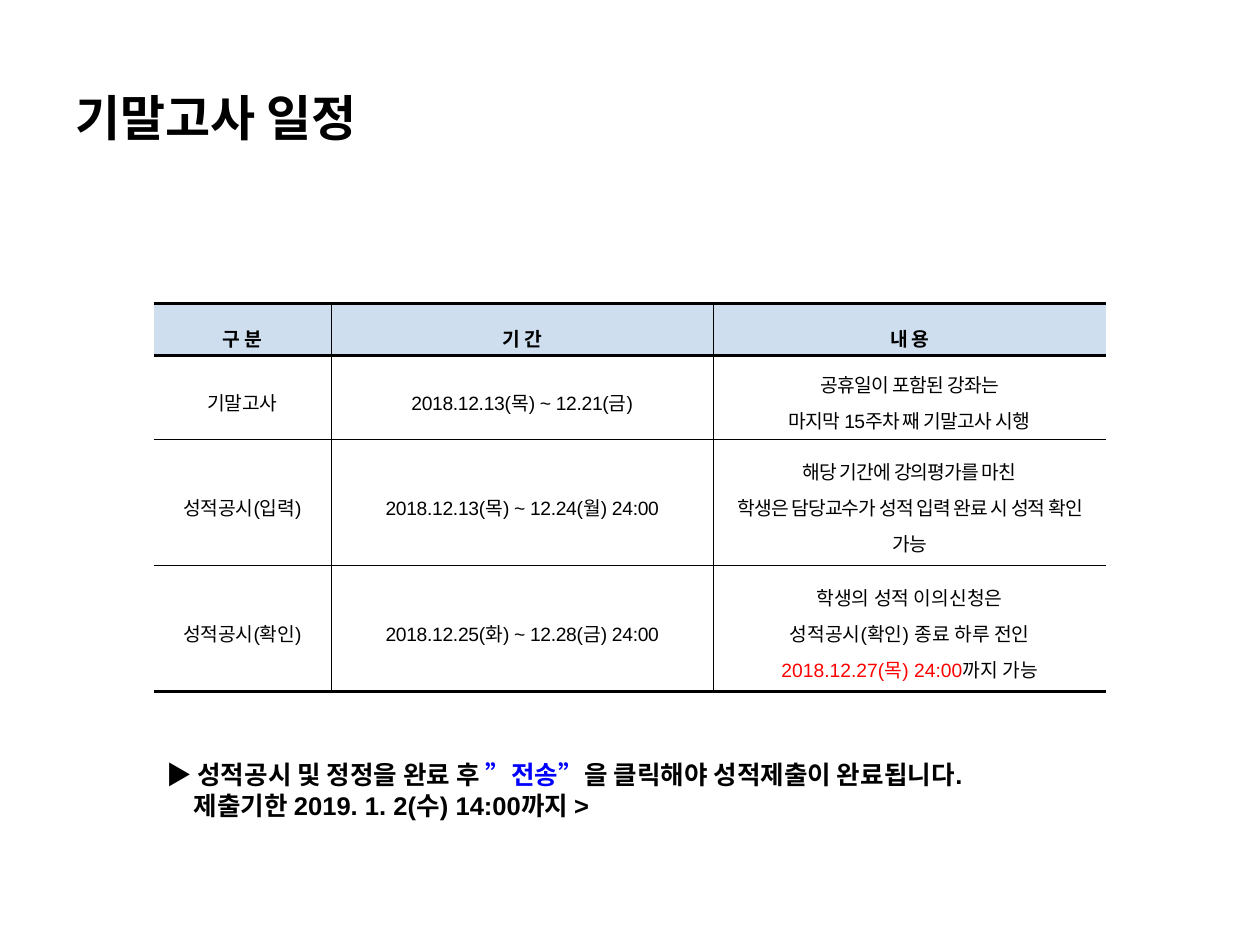
import dataclasses

import lxml.etree
import pptx
import pptx.dml.color
import pptx.enum.text
import pptx.oxml.ns
import pptx.util

Inches = pptx.util.Inches


@dataclasses.dataclass(frozen=True)
class Theme:
    """Fonts, colours, type sizes and rule widths."""

    latin: str = "Arial"
    korean: str = "Noto Sans CJK KR"
    black: str = "000000"
    red: str = "FF0000"
    blue: str = "0000FF"
    header: str = "CEDEEF"
    title_size: float = 28
    note_size: float = 14.6
    table_size: float = 11
    thin: float = 0.28
    thick: float = 1.7
    heavy: float = 1.98


THEME = Theme()


def add_text(paragraph, text, size, font=THEME.latin, color=THEME.black, bold=False, spacing=0):
    """Add a run to a paragraph with the given format."""
    run = paragraph.add_run()
    run.text = text
    run.font.name = font
    run.font.size = pptx.util.Pt(size)
    run.font.bold = bold
    run.font.color.rgb = pptx.dml.color.RGBColor.from_string(color)
    properties = run.font._element
    properties.set("spc", str(round(spacing * 100)))
    latin = properties.find(pptx.oxml.ns.qn("a:latin"))
    east_asian = lxml.etree.Element(pptx.oxml.ns.qn("a:ea"), typeface=THEME.korean)
    latin.addnext(east_asian)


def set_border(cell, side, width):
    """Draw one side of a cell in black, or clear it when the width is zero."""
    properties = cell._tc.get_or_add_tcPr()
    line = lxml.etree.SubElement(
        properties, pptx.oxml.ns.qn(f"a:ln{side}"), w=str(pptx.util.Pt(width))
    )
    if width:
        fill = lxml.etree.SubElement(line, pptx.oxml.ns.qn("a:solidFill"))
        lxml.etree.SubElement(fill, pptx.oxml.ns.qn("a:srgbClr"), val=THEME.black)
    else:
        lxml.etree.SubElement(line, pptx.oxml.ns.qn("a:noFill"))


def place_title(slide, box):
    """Fill the title placeholder."""
    title = slide.shapes.title
    title.left, title.top, title.width, title.height = box
    title.text_frame.vertical_anchor = pptx.enum.text.MSO_ANCHOR.MIDDLE
    paragraph = title.text_frame.paragraphs[0]
    paragraph.alignment = pptx.enum.text.PP_ALIGN.LEFT
    add_text(paragraph, "기말고사 일정", THEME.title_size, font=THEME.korean, bold=True)


def fill_cell(cell, lines, is_header, spacing):
    """Write centred lines of (text, colour) runs into a cell."""
    cell.margin_left = cell.margin_right = Inches(0.07)
    cell.margin_top = cell.margin_bottom = Inches(0.02)
    cell.vertical_anchor = pptx.enum.text.MSO_ANCHOR.MIDDLE
    for index, line in enumerate(lines):
        frame = cell.text_frame
        paragraph = frame.add_paragraph() if index else frame.paragraphs[0]
        paragraph.alignment = pptx.enum.text.PP_ALIGN.CENTER
        paragraph.line_spacing = 1.6 if is_header else 1.3
        for text, color in line:
            add_text(paragraph, text, THEME.table_size, color=color, bold=is_header, spacing=spacing)


def place_schedule(slide, box):
    """Build the schedule table."""
    black = THEME.black
    rows = [
        ("구 분", "기 간", [[("내 용", black)]]),
        ("기말고사", "2018.12.13(목) ~ 12.21(금)", [
            [("공휴일이 포함된 강좌는", black)],
            [("마지막 15주차 째 기말고사 시행", black)],
        ]),
        ("성적공시(입력)", "2018.12.13(목) ~ 12.24(월) 24:00", [
            [("해당 기간에 강의평가를 마친", black)],
            [("학생은 담당교수가 성적 입력 완료 시 성적 확인 가능", black)],
        ]),
        ("성적공시(확인)", "2018.12.25(화) ~ 12.28(금) 24:00", [
            [("학생의 성적 이의신청은", black)],
            [("성적공시(확인) 종료 하루 전인", black)],
            [("2018.12.27(목) 24:00", THEME.red), ("까지 가능", black)],
        ]),
    ]
    column_widths = (1.41, 3.03, 3.12)
    row_heights = (0.41, 0.67, 1, 1)
    content_spacing = (-0.2, -0.4, -0.5, 0)
    column_rules = (0, THEME.thin, THEME.thin, 0)
    row_rules = (THEME.thick, THEME.heavy, THEME.thin, THEME.thin, THEME.thick)

    table = slide.shapes.add_table(len(rows), len(column_widths), *box).table
    table.first_row = table.horz_banding = False
    for column, width in zip(table.columns, column_widths):
        column.width = Inches(width)
    for row_index, (category, period, content) in enumerate(rows):
        table.rows[row_index].height = Inches(row_heights[row_index])
        is_header = row_index == 0
        row_lines = ([[(category, black)]], [[(period, black)]], content)
        for column_index, lines in enumerate(row_lines):
            cell = table.cell(row_index, column_index)
            spacing = content_spacing[row_index] if column_index == 2 else -0.2
            fill_cell(cell, lines, is_header, spacing)
            set_border(cell, "L", column_rules[column_index])
            set_border(cell, "R", column_rules[column_index + 1])
            set_border(cell, "T", row_rules[row_index])
            set_border(cell, "B", row_rules[row_index + 1])
            if is_header:
                cell.fill.solid()
                cell.fill.fore_color.rgb = pptx.dml.color.RGBColor.from_string(THEME.header)
            else:
                cell.fill.background()


def place_note(slide, box):
    """Add the submission note below the table."""
    frame = slide.shapes.add_textbox(*box).text_frame
    frame.word_wrap = True
    frame.vertical_anchor = pptx.enum.text.MSO_ANCHOR.MIDDLE
    notice = frame.paragraphs[0]
    for text, color in (
        ("▶ 성적공시 및 정정을 완료 후 ", THEME.black),
        ("”전송”", THEME.blue),
        ("을 클릭해야 성적제출이 완료됩니다.", THEME.black),
    ):
        add_text(notice, text, THEME.note_size, color=color, bold=True)
    deadline = frame.add_paragraph()
    deadline._p.get_or_add_pPr().set("marL", str(Inches(0.22)))
    add_text(deadline, "제출기한 2019. 1. 2(수) 14:00까지 >", THEME.note_size, bold=True)


def main():
    """Build and save the presentation."""
    presentation = pptx.Presentation()
    presentation.slide_width = Inches(10)
    presentation.slide_height = Inches(7.5)
    slide = presentation.slides.add_slide(presentation.slide_layouts[5])
    place_title(slide, (Inches(0.5), Inches(0.3), Inches(9), Inches(1.25)))
    place_schedule(slide, (Inches(1.22), Inches(2.41), Inches(7.56), Inches(3.08)))
    place_note(slide, (Inches(1.22), Inches(5.72), Inches(7.56), Inches(1.1)))
    presentation.save("out.pptx")


if __name__ == "__main__":
    main()
